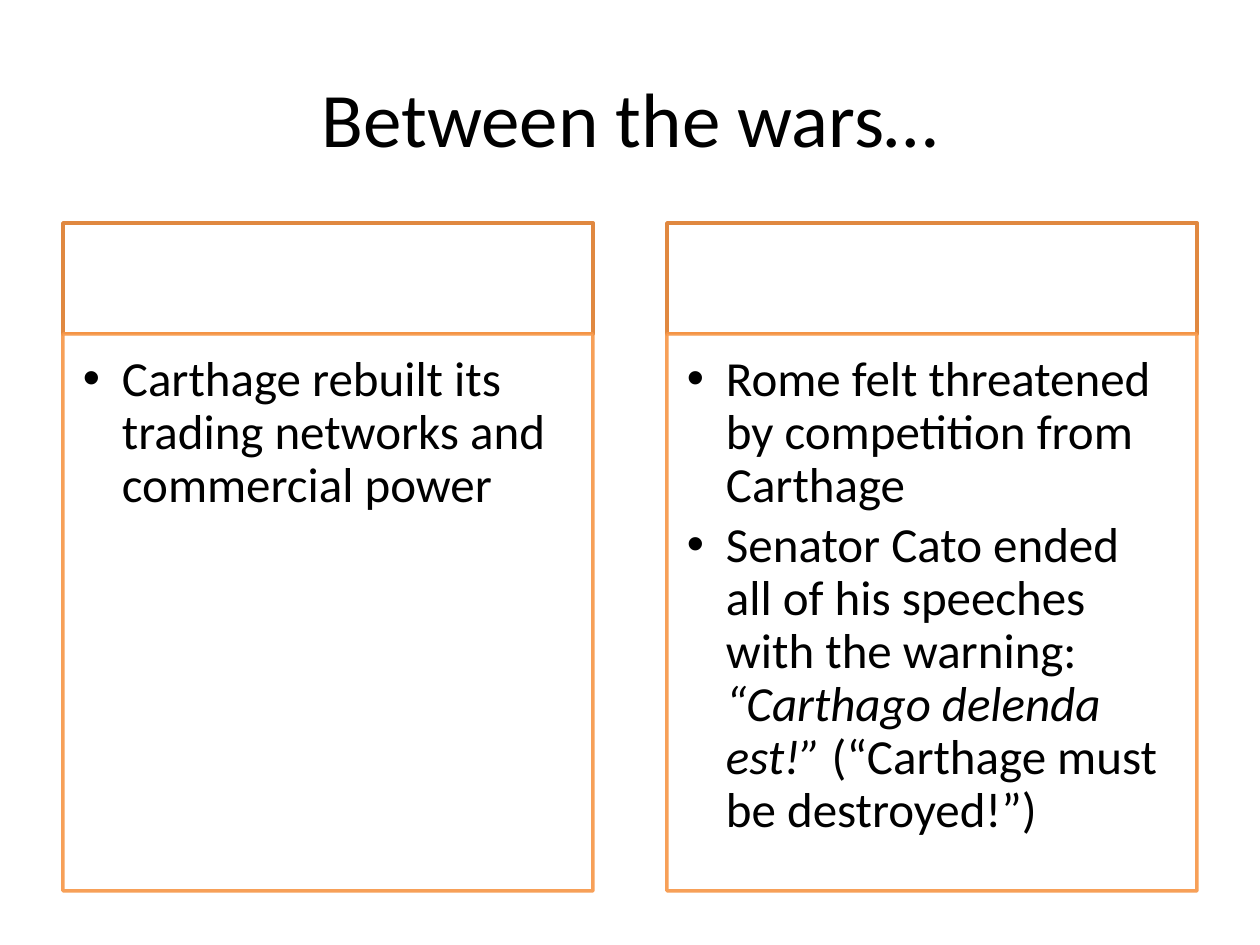
from dataclasses import dataclass

from lxml.etree import SubElement
from pptx import Presentation
from pptx.dml.color import RGBColor
from pptx.enum.shapes import MSO_SHAPE
from pptx.enum.text import MSO_ANCHOR, MSO_AUTO_SIZE, PP_ALIGN
from pptx.oxml.ns import qn
from pptx.util import Emu, Inches, Pt

WHITE = RGBColor(0xFF, 0xFF, 0xFF)
BLACK = RGBColor(0x00, 0x00, 0x00)
HEADER_LINE = RGBColor(0xE0, 0x88, 0x40)
PANEL_LINE = RGBColor(0xF7, 0x96, 0x46)
FONT = "Calibri"

TOP, HEADER_H, PANEL_H = 223, 111, 557
LEFT, COL_W, COL_STEP = 63, 530, 604
INDENT = 39


@dataclass
class Run:
    text: str
    italic: bool = False


@dataclass
class Column:
    bullets: list[list[Run]]


COLUMNS = [
    Column([[Run("Carthage rebuilt its trading networks and commercial power")]]),
    Column([
        [Run("Rome felt threatened by competition from Carthage")],
        [Run("Senator Cato ended all of his speeches with the warning: "),
         Run("“Carthago delenda est!”", italic=True),
         Run(" (“Carthage must be destroyed!”)")],
    ]),
]


def px(n: int) -> Emu:
    return Emu(round(n * 914400 / 126))


def place(sp, x: int, y: int, w: int, h: int) -> None:
    sp.left, sp.top, sp.width, sp.height = px(x), px(y), px(w), px(h)


def set_font(p, size: int) -> None:
    p.font.name = FONT
    p.font.size = Pt(size)
    p.font.color.rgb = BLACK


def add_box(slide, body, x: int, y: int, h: int, line: RGBColor, alpha: int = 100) -> None:
    """Add a white outlined box behind the body placeholder; alpha is in percent."""
    sp = slide.shapes.add_shape(MSO_SHAPE.RECTANGLE, px(x), px(y), px(COL_W), px(h))
    sp.shadow.inherit = False
    sp.fill.solid()
    sp.fill.fore_color.rgb = WHITE
    sp.line.color.rgb = line
    sp.line.width = Pt(2)
    if alpha < 100:
        for color in sp._element.spPr.iter(qn("a:srgbClr")):
            SubElement(color, qn("a:alpha"), val=str(alpha * 1000))
    body._element.addprevious(sp._element)


def fill_body(body, column: Column) -> None:
    tf = body.text_frame
    tf.word_wrap = True
    tf.auto_size = MSO_AUTO_SIZE.NONE
    tf.vertical_anchor = MSO_ANCHOR.TOP
    tf.margin_left = tf.margin_top = px(20)
    tf.margin_right, tf.margin_bottom = px(28), px(30)
    for i, runs in enumerate(column.bullets):
        p = tf.add_paragraph() if i else tf.paragraphs[0]
        set_font(p, 28)
        p.line_spacing = 0.9
        p.space_before = Pt(0)
        p.space_after = Pt(4.2)
        pPr = p._p.get_or_add_pPr()
        pPr.set("marL", str(px(INDENT)))
        pPr.set("indent", str(-px(INDENT)))
        for run in runs:
            r = p.add_run()
            r.text = run.text
            if run.italic:
                r.font.italic = True


def add_column(slide, body, column: Column, x: int) -> None:
    panel_top = TOP + HEADER_H
    add_box(slide, body, x, TOP, HEADER_H, HEADER_LINE)
    add_box(slide, body, x, panel_top, PANEL_H, PANEL_LINE, alpha=90)
    place(body, x, panel_top, COL_W, PANEL_H)
    fill_body(body, column)


def main() -> None:
    prs = Presentation()
    prs.slide_width, prs.slide_height = Inches(10), Inches(7.5)
    slide = prs.slides.add_slide(prs.slide_layouts.get_by_name("Two Content"))

    title, *bodies = slide.placeholders
    place(title, 63, 38, 1134, 158)
    title.text_frame.text = "Between the wars…"
    title.text_frame.vertical_anchor = MSO_ANCHOR.MIDDLE
    p = title.text_frame.paragraphs[0]
    p.alignment = PP_ALIGN.CENTER
    set_font(p, 44)

    for i, (body, column) in enumerate(zip(bodies, COLUMNS)):
        add_column(slide, body, column, LEFT + i * COL_STEP)

    prs.save("out.pptx")


if __name__ == "__main__":
    main()
